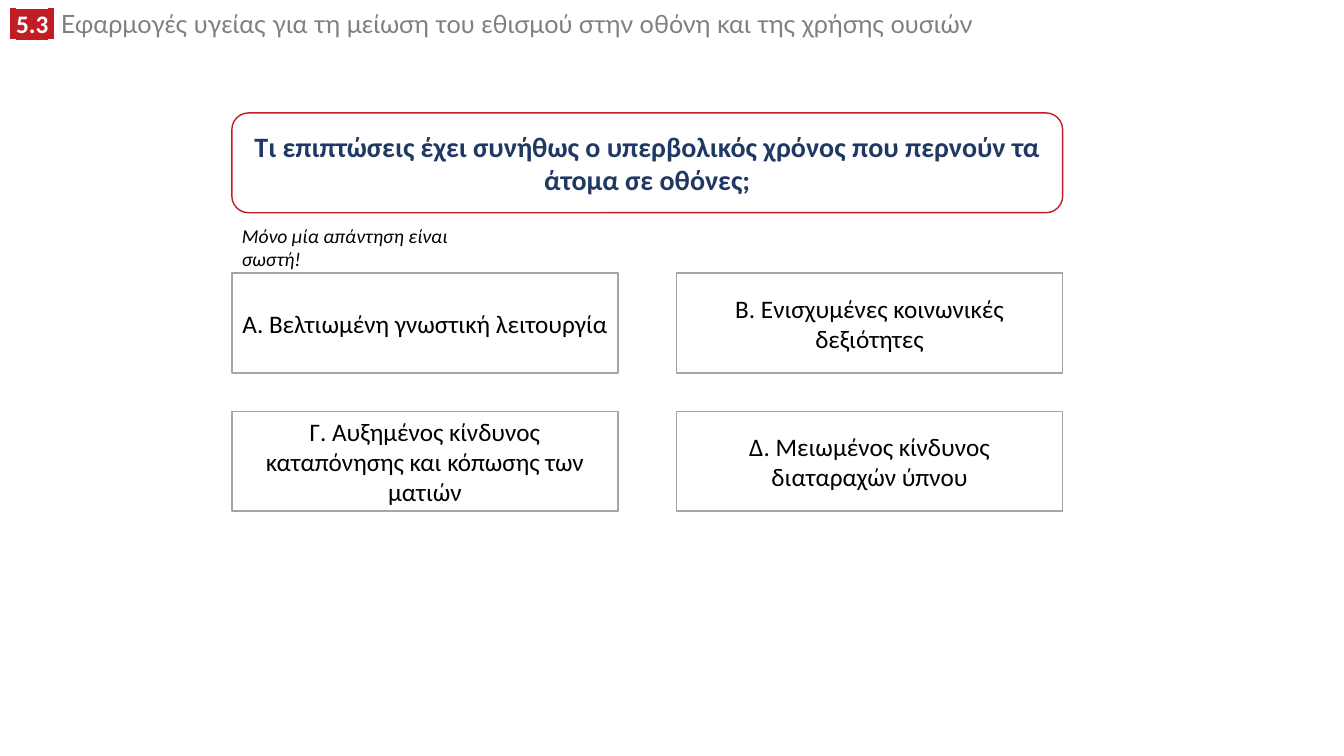
from dataclasses import dataclass, field

from lxml.etree import SubElement
from pptx import Presentation
from pptx.dml.color import RGBColor as RGB
from pptx.enum.shapes import MSO_SHAPE as SHAPE
from pptx.enum.text import MSO_ANCHOR as ANCHOR, MSO_AUTO_SIZE as AUTO, PP_ALIGN as ALIGN
from pptx.oxml.ns import qn
from pptx.util import Inches, Pt

COLORS = {"red": "C01E24", "navy": "203864", "gray": "808080",
          "border": "A5A5A5", "white": "FFFFFF", "black": "000000"}

LEFT, TOP = 2.3, 2.71
CARD_W, CARD_H = 3.83, 0.99
COL_STEP, ROW_STEP = 4.41, 1.37


@dataclass
class Run:
    text: str
    color: str = "black"
    highlight: str = ""
    fmt: dict = field(default_factory=dict)


@dataclass
class Card:
    run: Run
    x: float
    y: float
    w: float = CARD_W
    kind: SHAPE = SHAPE.RECTANGLE
    border: str = "border"


def rgb(name: str) -> RGB:
    return RGB.from_string(COLORS[name])


def add_run(p, run: Run) -> None:
    r = p.add_run()
    r.text = run.text
    for key, value in {"name": "Calibri", "size": Pt(18), **run.fmt}.items():
        setattr(r.font, key, value)
    r.font.color.rgb = rgb(run.color)
    if run.highlight:
        rPr = r.font.fill._xPr
        mark = SubElement(rPr, qn("a:highlight"))
        SubElement(mark, qn("a:srgbClr")).set("val", COLORS[run.highlight])
        rPr.find(qn("a:solidFill")).addnext(mark)


def draw_card(slide, card: Card) -> None:
    s = slide.shapes.add_shape(card.kind, *map(Inches, (card.x, card.y, card.w, CARD_H)))
    s.shadow.inherit = False
    s.fill.solid()
    s.fill.fore_color.rgb = rgb("white")
    s.line.color.rgb = rgb(card.border)
    s.line.width = Pt(1)
    tf = s.text_frame
    tf.word_wrap = True
    tf.vertical_anchor = ANCHOR.MIDDLE
    p = tf.paragraphs[0]
    p.alignment = ALIGN.CENTER
    add_run(p, card.run)


def draw_text(slide, x: float, y: float, w: float, runs: list[Run], spacing: float = 1.0) -> None:
    tf = slide.shapes.add_textbox(*map(Inches, (x, y, w, 0.34))).text_frame
    tf.word_wrap = True
    tf.auto_size = AUTO.SHAPE_TO_FIT_TEXT
    p = tf.paragraphs[0]
    p.line_spacing = spacing
    for run in runs:
        add_run(p, run)


def main() -> None:
    prs = Presentation()
    prs.slide_width, prs.slide_height = Inches(13.33), Inches(7.5)
    slide = prs.slides.add_slide(prs.slide_layouts[6])

    badge = [Run(text, "white", "red", {"name": font, "bold": True})
             for text, font in ((" ", "Lato"), ("5.3", "Calibri"), (" ", "Lato"))]
    heading = Run(" Εφαρμογές υγείας για τη μείωση του εθισμού στην οθόνη και της χρήσης ουσιών",
                  "gray", fmt={"name": "Lato"})
    draw_text(slide, 0, 0.09, 12.51, [*badge, heading], 0.8)

    question = Run("Τι επιπτώσεις έχει συνήθως ο υπερβολικός χρόνος που περνούν τα άτομα σε οθόνες;",
                   "navy", fmt={"size": Pt(20), "bold": True})
    draw_card(slide, Card(question, LEFT, 1.12, COL_STEP + CARD_W, SHAPE.ROUNDED_RECTANGLE, "red"))

    hint = Run("Μόνο μία απάντηση είναι σωστή!", fmt={"size": Pt(14), "italic": True})
    draw_text(slide, LEFT, 2.17, 2.36, [hint])

    answers = ("Α. Βελτιωμένη γνωστική λειτουργία",
               "B. Ενισχυμένες κοινωνικές δεξιότητες",
               "Γ. Αυξημένος κίνδυνος καταπόνησης και κόπωσης των ματιών",
               "Δ. Μειωμένος κίνδυνος διαταραχών ύπνου")
    for i, answer in enumerate(answers):
        row, col = divmod(i, 2)
        draw_card(slide, Card(Run(answer), LEFT + col * COL_STEP, TOP + row * ROW_STEP))

    prs.save("out.pptx")


if __name__ == "__main__":
    main()
